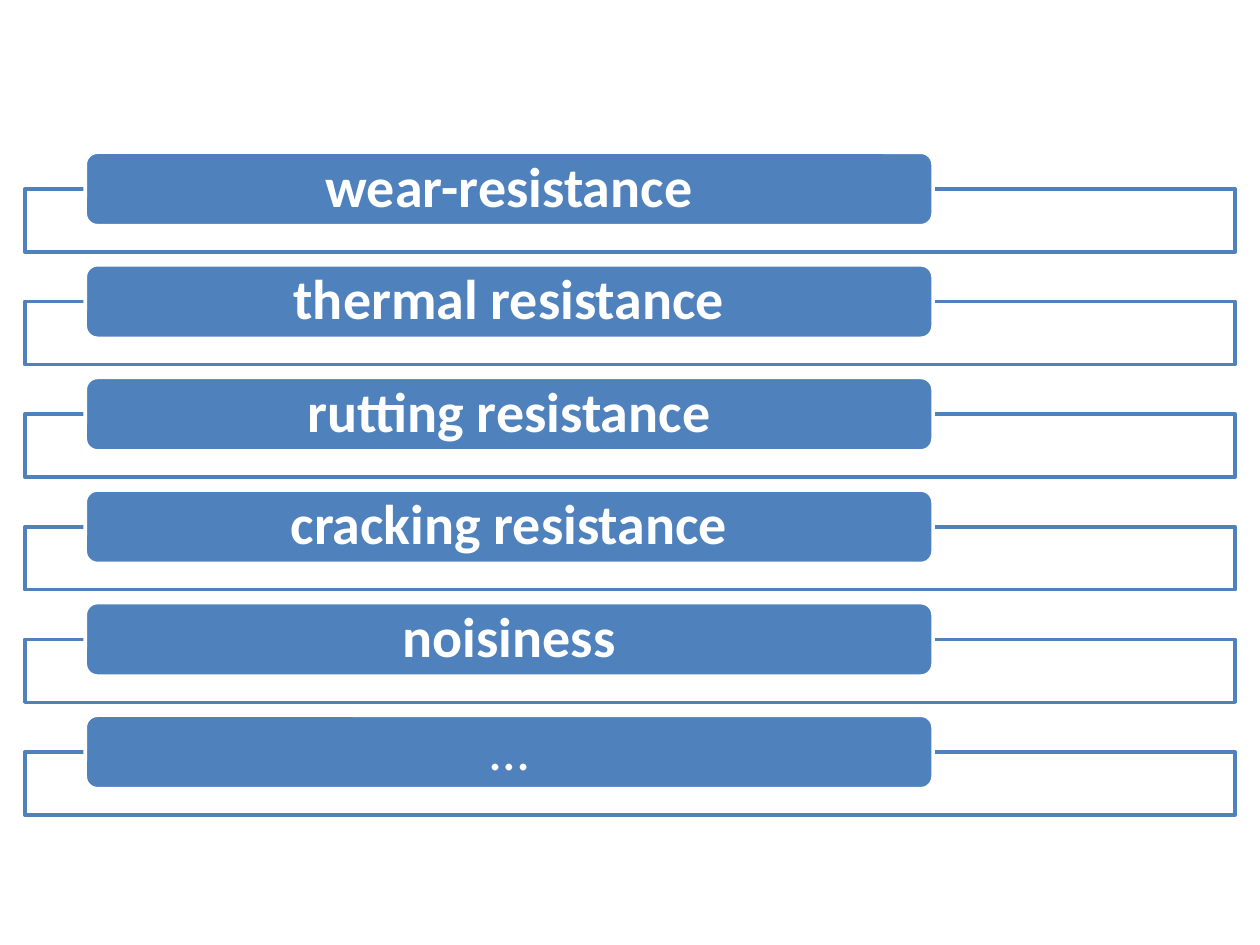
from lxml import etree
from pptx import Presentation
from pptx.dml.color import RGBColor
from pptx.enum.shapes import MSO_SHAPE
from pptx.enum.text import MSO_ANCHOR, PP_ALIGN
from pptx.oxml.ns import qn
from pptx.util import Cm, Pt

RECT = MSO_SHAPE.RECTANGLE
ROUND = MSO_SHAPE.ROUNDED_RECTANGLE
MIDDLE = MSO_ANCHOR.MIDDLE
CENTER = PP_ALIGN.CENTER
BLUE = RGBColor(0x4F, 0x81, 0xBD)
WHITE = RGBColor(0xFF, 0xFF, 0xFF)

TOP, STEP = 3.07, 2.27  # first label and row pitch, in cm
ROWS = [
    ("wear-resistance", True),
    ("thermal resistance", True),
    ("rutting resistance", True),
    ("cracking resistance", True),
    ("noisiness", True),
    ("…", False),
]

prs = Presentation()
prs.slide_width, prs.slide_height = Cm(25.4), Cm(19.05)
slide = prs.slides.add_slide(prs.slide_layouts[6])
group = slide.shapes.add_group_shape()


def add_box(kind, left, top, width, height, fill, line):
    box = group.shapes.add_shape(kind, Cm(left), Cm(top), Cm(width), Cm(height))
    box.shadow.inherit = False
    box.fill.solid()
    box.fill.fore_color.rgb = fill
    box.line.color.rgb = line
    box.line.width = Pt(2)
    return box


for i, (text, bold) in enumerate(ROWS):
    top = TOP + i * STEP

    # Frame behind the label, 90% opaque
    frame = add_box(RECT, 0.5, top + 0.74, 24.4, 1.27, WHITE, BLUE)
    color = frame.fill._xPr.find(qn("a:solidFill"))[0]
    etree.SubElement(color, qn("a:alpha")).set("val", "90000")

    # Rounded label
    label = add_box(ROUND, 1.72, top, 17.09, 1.48, BLUE, WHITE)
    frame = label.text_frame
    frame.word_wrap = True
    frame.vertical_anchor = MIDDLE
    frame.margin_left = frame.margin_right = Cm(0.64)
    frame.margin_top = frame.margin_bottom = 0
    para = frame.paragraphs[0]
    para.alignment = CENTER
    para.line_spacing = 0.9
    run = para.add_run()
    run.text = text
    run.font.name = "Calibri"
    run.font.size = Pt(32)
    run.font.bold = bold
    run.font.color.rgb = WHITE

prs.save("out.pptx")
